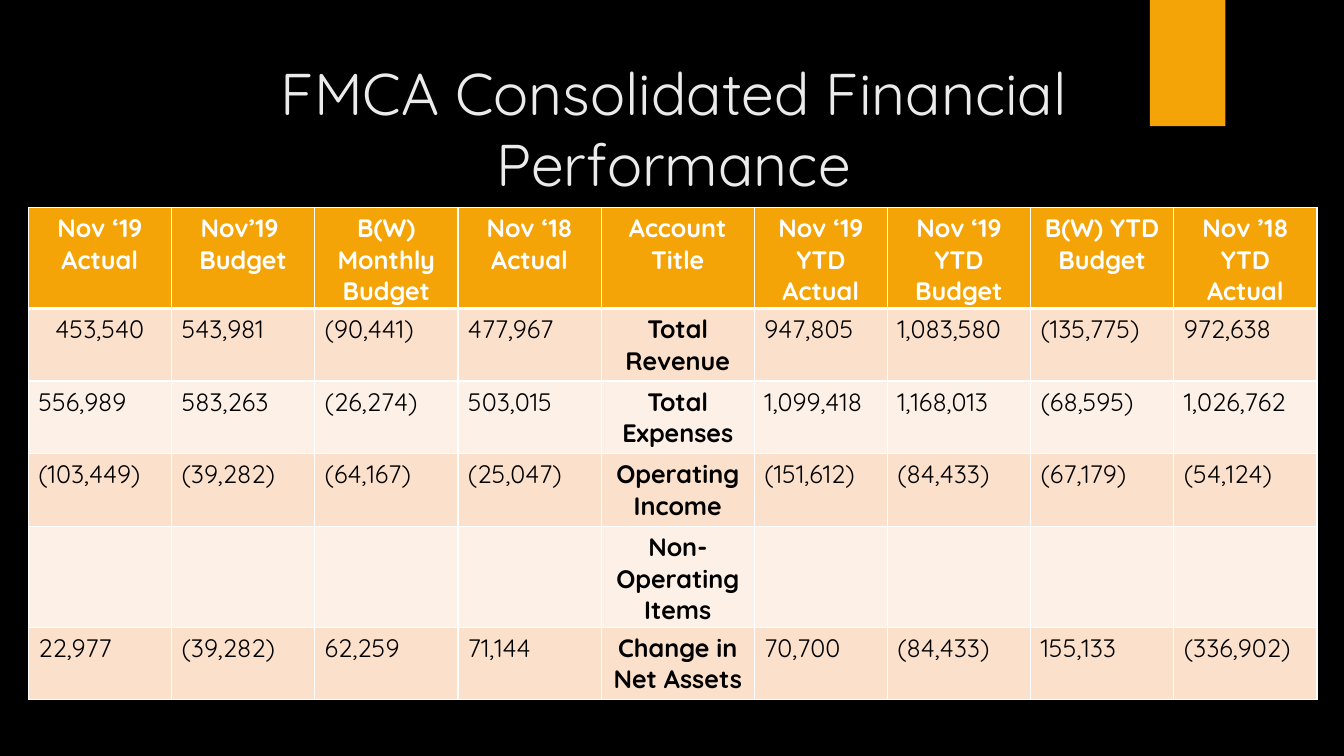
from typing import NamedTuple

from lxml.etree import SubElement
from pptx import Presentation
from pptx.dml.color import RGBColor
from pptx.enum.shapes import MSO_SHAPE as Shape
from pptx.enum.text import MSO_ANCHOR as Anchor, PP_ALIGN as Align
from pptx.oxml.ns import qn
from pptx.util import Cm, Pt

FONT = "Quicksand"
COLORS = {
    "background": "000000",
    "accent": "F5A408",
    "title": "EBEBEB",
    "border": "FFFFFF",
    "header_text": "FFFFFF",
    "body_text": "000000",
    "dark_band": "FBE0CC",
    "light_band": "FDF0E7",
}


class Box(NamedTuple):
    left: float
    top: float
    width: float
    height: float

    def lengths(self) -> list:
        return [Cm(value) for value in self]


class CellStyle(NamedTuple):
    fill: str
    color: str
    bold: bool
    align: Align
    top: float = 1
    bottom: float = 1


TAB_BOX = Box(28.98, 0, 1.9, 3.18)
TITLE_BOX = Box(3.91, 1.27, 26.14, 3.89)
TABLE_BOX = Box(0.71, 5.23, 32.48, 10.98)
COLUMN_WIDTHS = [3.61] * 4 + [3.86, 3.35] + [3.61] * 3
ACCOUNT_COLUMN = 4

HEADERS = [
    "Nov ‘19\nActual", "Nov’19 \nBudget", "B(W) Monthly Budget",
    "Nov ‘18\nActual", "Account Title", "Nov ‘19 YTD Actual",
    "Nov ‘19 YTD Budget", "B(W) YTD Budget", "Nov ’18 YTD Actual",
]
ROWS = [
    ["453,540", "543,981", "(90,441)", "477,967", "Total Revenue",
     "947,805", "1,083,580", "(135,775)", "972,638"],
    ["556,989", "583,263", "(26,274)", "503,015", "Total Expenses",
     "1,099,418", "1,168,013", "(68,595)", "1,026,762"],
    ["(103,449)", "(39,282)", "(64,167)", "(25,047)", "Operating Income",
     "(151,612)", "(84,433)", "(67,179)", "(54,124)"],
    [""] * 4 + ["Non-Operating Items"] + [""] * 4,
    ["22,977", "(39,282)", "62,259", "71,144", "Change in Net Assets",
     "70,700", "(84,433)", "155,133", "(336,902)"],
]


def rgb(name: str) -> RGBColor:
    return RGBColor.from_string(COLORS[name])


def style_paragraph(para, size: float, color: str, bold: bool, align: Align) -> None:
    para.alignment = align
    para.font.name = FONT
    para.font.size = Pt(size)
    para.font.bold = bold
    para.font.color.rgb = rgb(color)


def add_border(cell, side: str, points: float) -> None:
    properties = cell._tc.get_or_add_tcPr()
    line = SubElement(properties, qn(f"a:{side}"), w=str(Pt(points)))
    fill = SubElement(line, qn("a:solidFill"))
    SubElement(fill, qn("a:srgbClr"), val=COLORS["border"])


def fill_cell(cell, text: str, style: CellStyle) -> None:
    cell.text = text
    for para in cell.text_frame.paragraphs:
        style_paragraph(para, 18, style.color, style.bold, style.align)
    borders = {"lnL": 1, "lnR": 1, "lnT": style.top, "lnB": style.bottom}
    for side, points in borders.items():
        add_border(cell, side, points)
    cell.fill.solid()
    cell.fill.fore_color.rgb = rgb(style.fill)


def cell_style(row: int, column: int) -> CellStyle:
    if row == 0:
        return CellStyle("accent", "header_text", True, Align.CENTER, bottom=3)
    is_account = column == ACCOUNT_COLUMN
    centered = is_account or (row, column) == (1, 0)
    return CellStyle(
        fill="dark_band" if row % 2 else "light_band",
        color="body_text",
        bold=is_account,
        align=Align.CENTER if centered else Align.LEFT,
        top=3 if row == 1 else 1,
    )


def add_accent_tab(page) -> None:
    tab = page.shapes.add_shape(Shape.RECTANGLE, *TAB_BOX.lengths())
    tab.shadow.inherit = False
    tab.fill.solid()
    tab.fill.fore_color.rgb = rgb("accent")
    tab.line.fill.background()


def add_title(page, text: str) -> None:
    frame = page.shapes.add_textbox(*TITLE_BOX.lengths()).text_frame
    frame.word_wrap = True
    frame.vertical_anchor = Anchor.MIDDLE
    para = frame.paragraphs[0]
    para.text = text
    style_paragraph(para, 42, "title", False, Align.CENTER)


def add_finance_table(page) -> None:
    lines = [HEADERS] + ROWS
    table = page.shapes.add_table(
        len(lines), len(HEADERS), *TABLE_BOX.lengths()).table
    table.first_row = False
    table.horz_banding = False
    for column, width in zip(table.columns, COLUMN_WIDTHS):
        column.width = Cm(width)
    for row, texts in enumerate(lines):
        for column, text in enumerate(texts):
            fill_cell(table.cell(row, column), text, cell_style(row, column))


def main() -> None:
    deck = Presentation()
    deck.slide_width, deck.slide_height = Cm(33.87), Cm(19.05)
    page = deck.slides.add_slide(deck.slide_layouts[6])

    # Background and accent
    page.background.fill.solid()
    page.background.fill.fore_color.rgb = rgb("background")
    add_accent_tab(page)

    # Content
    add_title(page, "FMCA Consolidated Financial Performance")
    add_finance_table(page)
    deck.save("out.pptx")


if __name__ == "__main__":
    main()
